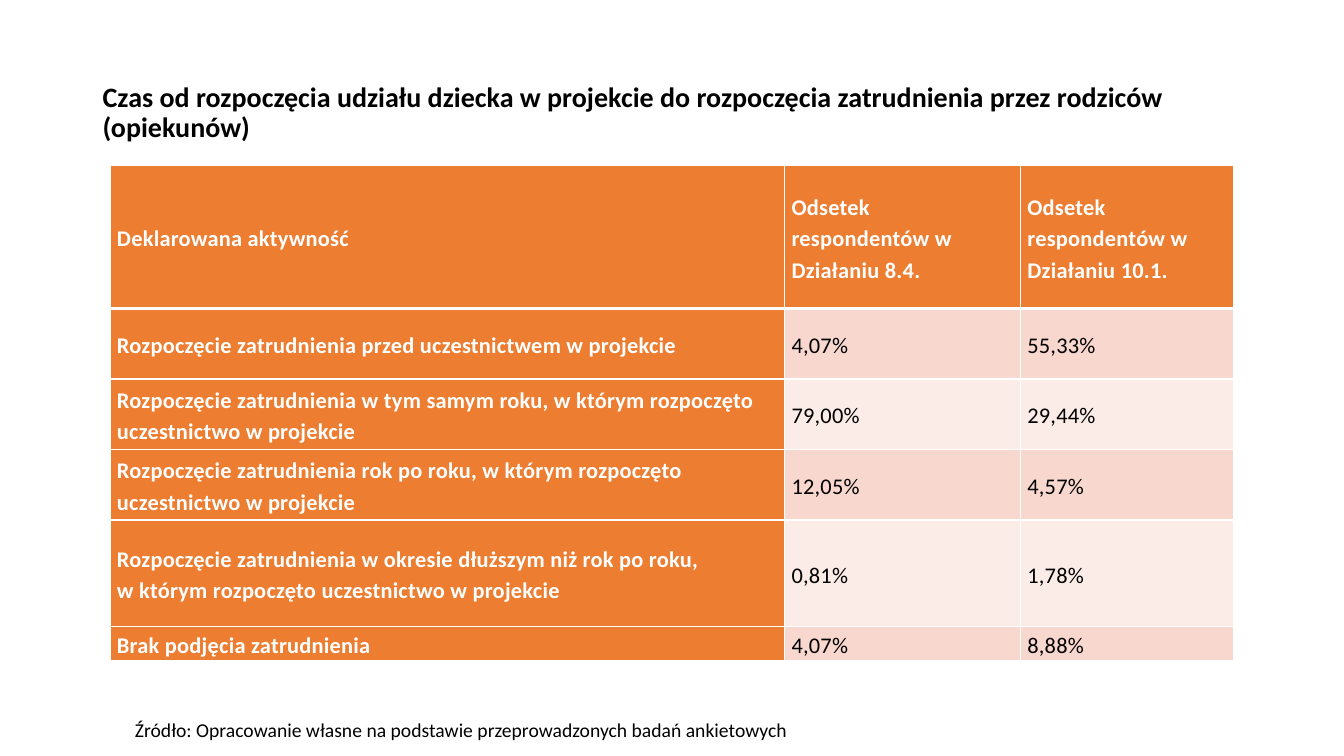
import dataclasses

import lxml.etree
import pptx
import pptx.dml.color
import pptx.enum.text
import pptx.oxml.ns
import pptx.util

WIDE = pptx.util.Inches(13.33)
HIGH = pptx.util.Inches(7.5)
FONT = "Calibri"

WHITE = pptx.dml.color.RGBColor(0xFF, 0xFF, 0xFF)
BLACK = pptx.dml.color.RGBColor(0x00, 0x00, 0x00)
ORANGE = pptx.dml.color.RGBColor(0xED, 0x7D, 0x31)
BANDS = (
    pptx.dml.color.RGBColor(0xF8, 0xD7, 0xCE),
    pptx.dml.color.RGBColor(0xFC, 0xEC, 0xE8),
)

ALIGN = pptx.enum.text.PP_ALIGN
ANCHOR = pptx.enum.text.MSO_ANCHOR


@dataclasses.dataclass(frozen=True)
class Note:
    """A text box, placed in percent of the slide."""
    text: str
    left: float
    top: float
    width: float
    height: float
    size: int
    bold: bool
    anchor: ANCHOR
    before: int


@dataclasses.dataclass(frozen=True)
class Row:
    """A table row, its height in percent of the slide."""
    height: float
    label: str
    first: str
    second: str


NOTES = (
    Note("Czas od rozpoczęcia udziału dziecka w projekcie do rozpoczęcia "
         "zatrudnienia przez rodziców (opiekunów)",
         6.9, 5.33, 86.27, 19.33, 20, True, ANCHOR.MIDDLE, 0),
    Note("Źródło: Opracowanie własne na podstawie przeprowadzonych badań "
         "ankietowych",
         9.3, 94.67, 86.27, 7.6, 14, False, ANCHOR.TOP, 10),
)

LEFT, TOP = 8.18, 21.87
COLS = (50.19, 17.55, 15.9)
ROWS = (
    Row(18.93, "Deklarowana aktywność",
        "Odsetek respondentów w Działaniu 8.4.",
        "Odsetek respondentów w Działaniu 10.1."),
    Row(9.33, "Rozpoczęcie zatrudnienia przed uczestnictwem w projekcie",
        "4,07%", "55,33%"),
    Row(9.33, "Rozpoczęcie zatrudnienia w tym samym roku, w którym "
        "rozpoczęto uczestnictwo w projekcie", "79,00%", "29,44%"),
    Row(9.33, "Rozpoczęcie zatrudnienia rok po roku, w którym rozpoczęto "
        "uczestnictwo w projekcie", "12,05%", "4,57%"),
    Row(14.13, "Rozpoczęcie zatrudnienia w okresie dłuższym niż rok po roku,\n"
        "w którym rozpoczęto uczestnictwo w projekcie", "0,81%", "1,78%"),
    Row(4.53, "Brak podjęcia zatrudnienia", "4,07%", "8,88%"),
)


def across(share: float) -> int:
    return round(WIDE * share / 100)


def down(share: float) -> int:
    return round(HIGH * share / 100)


def style(par, size: int, bold: bool, color, lead: float, before: int,
          after: int = 0, track: int = 0) -> None:
    """Format a paragraph and its runs; track is in hundredths of a point."""
    par.line_spacing = lead
    par.space_before = pptx.util.Pt(before)
    par.space_after = pptx.util.Pt(after)
    for run in par.runs:
        run.font.name = FONT
        run.font.size = pptx.util.Pt(size)
        run.font.bold = bold
        run.font.color.rgb = color
        if track:
            run._r.get_or_add_rPr().set("spc", str(track))


def write(slide, note: Note) -> None:
    box = slide.shapes.add_textbox(across(note.left), down(note.top),
                                   across(note.width), down(note.height))
    frame = box.text_frame
    frame.word_wrap = True
    frame.vertical_anchor = note.anchor
    frame.text = note.text
    style(frame.paragraphs[0], note.size, note.bold, BLACK, 0.9, note.before)


def edge(cell, side: str, width: int) -> None:
    """Add a white border; sides must come in the order L, R, T, B."""
    name = pptx.oxml.ns.qn
    props = cell._tc.get_or_add_tcPr()
    line = lxml.etree.SubElement(props, name("a:ln" + side),
                                 w=str(pptx.util.Pt(width)))
    fill = lxml.etree.SubElement(line, name("a:solidFill"))
    lxml.etree.SubElement(fill, name("a:srgbClr"), val=str(WHITE))


def fill_cell(cell, text: str, row: int, col: int) -> None:
    head = row == 0 or col == 0
    thick = {(0, "B"), (1, "T")}
    for side in "LRTB":
        edge(cell, side, 3 if (row, side) in thick else 1)
    cell.fill.solid()
    cell.fill.fore_color.rgb = ORANGE if head else BANDS[(row - 1) % 2]
    cell.vertical_anchor = ANCHOR.MIDDLE
    cell.margin_left = cell.margin_right = pptx.util.Inches(0.07)
    cell.margin_top = cell.margin_bottom = 0
    par = cell.text_frame.paragraphs[0]
    par.text = text
    par.alignment = ALIGN.JUSTIFY if col == 2 and not head else ALIGN.LEFT
    style(par, 16, head, WHITE if head else BLACK, 1.15, 4, 4, 20)


def draw_table(slide) -> None:
    frame = slide.shapes.add_table(
        len(ROWS), len(COLS), across(LEFT), down(TOP), across(sum(COLS)),
        down(sum(row.height for row in ROWS)))
    table = frame.table
    for col, width in enumerate(COLS):
        table.columns[col].width = across(width)
    for num, row in enumerate(ROWS):
        table.rows[num].height = down(row.height)
        for col, text in enumerate((row.label, row.first, row.second)):
            fill_cell(table.cell(num, col), text, num, col)


def main() -> None:
    deck = pptx.Presentation()
    deck.slide_width, deck.slide_height = WIDE, HIGH
    slide = deck.slides.add_slide(deck.slide_layouts[6])
    title, source = NOTES
    write(slide, title)
    draw_table(slide)
    write(slide, source)
    deck.save("out.pptx")


if __name__ == "__main__":
    main()
